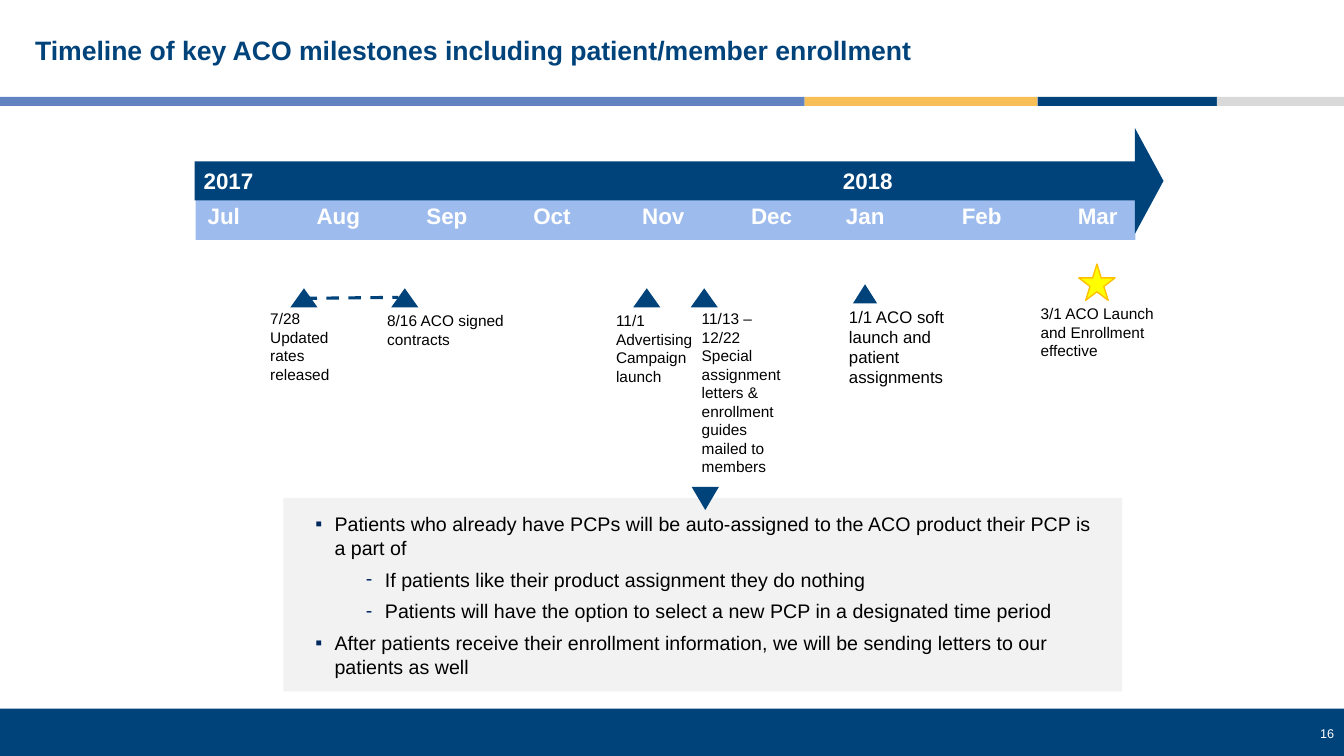
from dataclasses import dataclass
from itertools import pairwise

from lxml.etree import SubElement
from pptx import Presentation
from pptx.dml.color import RGBColor
from pptx.enum.dml import MSO_LINE
from pptx.enum.shapes import MSO_CONNECTOR, MSO_SHAPE
from pptx.enum.text import MSO_ANCHOR, PP_ALIGN
from pptx.oxml.ns import qn
from pptx.util import Pt

EMU_PER_PX = 9144


@dataclass(frozen=True)
class Theme:
    font: str = "Arial"
    navy: str = "00437B"
    blue: str = "6283C2"
    pale_blue: str = "9DBCED"
    amber: str = "F8BF56"
    silver: str = "D9D9D9"
    panel: str = "F2F2F2"
    yellow: str = "FFFF00"
    gold: str = "FFC000"
    bullet: str = "002960"
    white: str = "FFFFFF"
    black: str = "000000"
    title_size: int = 19
    header_size: int = 16
    body_size: int = 14
    launch_size: int = 12
    label_size: int = 11
    number_size: int = 9


def px(value):
    return value * EMU_PER_PX


def rgb(value):
    return RGBColor.from_string(value)


class TimelineSlide:
    """Draws the elements of one slide in a shared style, at 100 px to the inch."""

    def __init__(self, deck, theme):
        self.theme = theme
        self.page = deck.slides.add_slide(deck.slide_layouts[6])

    def shape(self, kind, left, top, width, height, fill, outline=None):
        shape = self.page.shapes.add_shape(kind, px(left), px(top), px(width), px(height))
        shape.shadow.inherit = False
        shape.fill.solid()
        shape.fill.fore_color.rgb = rgb(fill)
        if outline:
            shape.line.color.rgb = rgb(outline)
            shape.line.width = Pt(1)
        else:
            shape.line.fill.background()
        return shape

    def bar(self, left, top, width, height, fill):
        return self.shape(MSO_SHAPE.RECTANGLE, left, top, width, height, fill)

    def marker(self, left, top, width=27, height=19):
        return self.shape(MSO_SHAPE.ISOSCELES_TRIANGLE, left, top, width, height, self.theme.navy)

    def dashes(self, left, top, right, bottom):
        line = self.page.shapes.add_connector(
            MSO_CONNECTOR.STRAIGHT, px(left), px(top), px(right), px(bottom))
        line.line.color.rgb = rgb(self.theme.navy)
        line.line.width = Pt(2.25)
        line.line.dash_style = MSO_LINE.DASH
        SubElement(line._element.spPr, qn("a:effectLst"))

    def text_frame(self, left, top, width, height, inset=True):
        box = self.page.shapes.add_textbox(px(left), px(top), px(width), px(height))
        frame = box.text_frame
        frame.word_wrap = True
        if not inset:
            frame.margin_left = frame.margin_top = frame.margin_right = frame.margin_bottom = 0
        return frame

    def paragraph(self, frame, index, text, size, color, bold=False):
        para = frame.add_paragraph() if index else frame.paragraphs[0]
        span = para.add_run()
        span.text = text
        span.font.name = self.theme.font
        span.font.size = Pt(size)
        span.font.bold = bold
        span.font.color.rgb = rgb(color)
        return para

    def title(self, text):
        frame = self.text_frame(25, 17, 1276, 69)
        frame.vertical_anchor = MSO_ANCHOR.MIDDLE
        para = self.paragraph(frame, 0, text, self.theme.title_size, self.theme.navy, True)
        para.line_spacing = 0.9

    def page_number(self, text):
        frame = self.text_frame(1241, 715, 92, 25)
        para = self.paragraph(frame, 0, text, self.theme.number_size, self.theme.white)
        para.alignment = PP_ALIGN.RIGHT

    def header(self, left, top, text):
        frame = self.text_frame(left, top, 66, 27, inset=False)
        self.paragraph(frame, 0, text, self.theme.header_size, self.theme.white, True)

    def milestone(self, left, top, width, height, size, *lines):
        frame = self.text_frame(left, top, width, height, inset=False)
        for index, text in enumerate(lines):
            self.paragraph(frame, index, text, size, self.theme.black)

    def bullets(self, left, top, width, height, items):
        frame = self.text_frame(left, top, width, height)
        for index, (level, text) in enumerate(items):
            para = self.paragraph(frame, index, text, self.theme.body_size, self.theme.black)
            para.level = level
            para.space_after = Pt(6)
            props = para._p.get_or_add_pPr()
            props.set("marL", str(px(19 + 50 * level)))
            props.set("indent", str(px(-19)))
            color = SubElement(props, qn("a:buClr"))
            SubElement(color, qn("a:srgbClr"), val=self.theme.bullet)
            SubElement(props, qn("a:buFont"), typeface=self.theme.font)
            SubElement(props, qn("a:buChar"), char="▪-"[level])


def draw_frame(slide, theme):
    slide.bar(0, 703, 1333, 47, theme.navy)
    slide.page_number("16")
    edges = [0, 798, 1029, 1207, 1333]
    stripes = [theme.blue, theme.amber, theme.navy, theme.silver]
    for (left, right), fill in zip(pairwise(edges), stripes):
        slide.bar(left, 96, right - left, 9, fill)
    slide.title("Timeline of key ACO milestones including patient/member enrollment")


def draw_calendar(slide, theme):
    slide.bar(194, 197, 932, 41, theme.pale_blue)
    arrow = slide.shape(MSO_SHAPE.RIGHT_ARROW, 193, 127, 961, 105, theme.navy)
    arrow.adjustments[0] = 0.37
    arrow.adjustments[1] = 0.27
    for left, year in [(202, "2017"), (836, "2018")]:
        slide.header(left, 166, year)
    months = {"Jul": 206, "Aug": 314, "Sep": 423, "Oct": 529, "Nov": 637,
              "Dec": 745, "Jan": 839, "Feb": 954, "Mar": 1069}
    for month, left in months.items():
        slide.header(left, 201, month)


def draw_milestones(slide, theme):
    slide.dashes(302, 296, 395, 295)
    for left in (288, 388, 628, 685):
        slide.marker(left, 286)
    slide.marker(846, 282, 24)
    slide.shape(MSO_SHAPE.STAR_5_POINT, 1070, 262, 36, 36, theme.yellow, theme.gold)
    small = theme.label_size
    slide.milestone(268, 307, 88, 74, small, "7/28 Updated", "rates", "released")
    slide.milestone(384, 309, 143, 35, small, "8/16 ACO signed contracts")
    slide.milestone(611, 309, 88, 74, small, "11/1 Advertising Campaign launch")
    slide.milestone(696, 307, 92, 166, small, "11/13 – 12/22 Special assignment letters "
                    "& enrollment guides mailed to members")
    slide.milestone(842, 304, 129, 80, theme.launch_size,
                    "1/1 ACO soft launch and patient assignments")
    slide.milestone(1032, 302, 129, 55, small, "3/1 ACO Launch and Enrollment effective")


def draw_details(slide, theme):
    slide.bar(281, 494, 832, 192, theme.panel)
    slide.bullets(303, 503, 794, 177, [
        (0, "Patients who already have PCPs will be auto-assigned to the ACO product "
            "their PCP is a part of"),
        (1, "If patients like their product assignment they do nothing"),
        (1, "Patients will have the option to select a new PCP in a designated time period"),
        (0, "After patients receive their enrollment information, we will be sending "
            "letters to our patients as well"),
    ])
    slide.marker(686, 483, 27, 23).rotation = 180


def main():
    deck = Presentation()
    deck.slide_width, deck.slide_height = px(1333), px(750)
    theme = Theme()
    slide = TimelineSlide(deck, theme)
    for draw in (draw_frame, draw_calendar, draw_milestones, draw_details):
        draw(slide, theme)
    deck.save("out.pptx")


if __name__ == "__main__":
    main()
